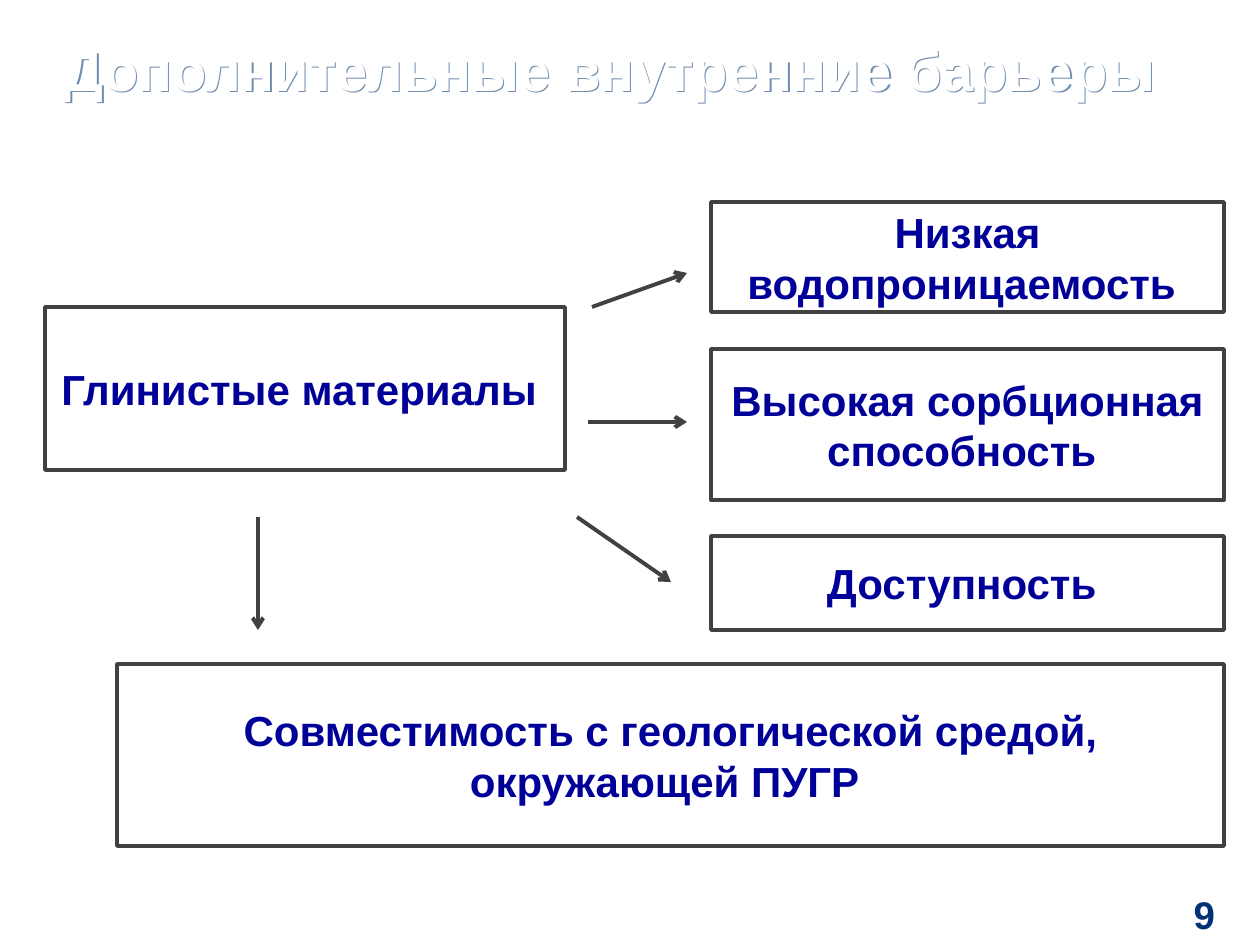
from lxml.etree import SubElement
from pptx import Presentation
from pptx.dml.color import RGBColor
from pptx.enum.shapes import MSO_CONNECTOR as Connector, MSO_SHAPE as Shape
from pptx.enum.text import MSO_ANCHOR as Anchor, PP_ALIGN as Align
from pptx.oxml.ns import qn
from pptx.util import Emu, Pt

SCALE = 914400 / 126
COLORS = {
    "white": "FFFFFF",
    "navy": "003274",
    "label": "000099",
    "line": "414142",
    "shadow": "6F8DB0",
}


def px(*values):
    return [Emu(round(value * SCALE)) for value in values]


def rgb(name):
    return RGBColor.from_string(COLORS[name])


def write(shape, text, size=24, color="label", align=Align.CENTER,
          margins=(13, 6, 13, 6), spacing=None):
    frame = shape.text_frame
    frame.word_wrap = True
    frame.vertical_anchor = Anchor.MIDDLE
    (frame.margin_left, frame.margin_top,
     frame.margin_right, frame.margin_bottom) = px(*margins)
    para = frame.paragraphs[0]
    para.alignment = align
    para.line_spacing = spacing
    span = para.add_run()
    span.text = text
    span.font.name = "Arial"
    span.font.size = Pt(size)
    span.font.bold = True
    span.font.color.rgb = rgb(color)


def add_title(page, box, text):
    title = page.shapes.add_textbox(*px(*box))
    write(title, text, size=32, color="white", align=Align.LEFT,
          margins=(0, 0, 0, 0), spacing=0.9)
    # A shadow on an unfilled box falls from its letters
    effects = SubElement(title._element.spPr, qn("a:effectLst"))
    shadow = SubElement(effects, qn("a:outerShdw"), dist="12700",
                        dir="2700000", algn="tl", rotWithShape="0")
    SubElement(shadow, qn("a:srgbClr"), val=COLORS["shadow"])


def add_page_number(page, box, text):
    number = page.shapes.add_textbox(*px(*box))
    write(number, text, size=22, color="navy", align=Align.RIGHT,
          margins=(0, 0, 45, 0))


def add_process(page, box, text):
    process = page.shapes.add_shape(Shape.FLOWCHART_PROCESS, *px(*box))
    process.shadow.inherit = False
    process.fill.solid()
    process.fill.fore_color.rgb = rgb("white")
    process.line.color.rgb = rgb("line")
    process.line.width = Pt(2)
    write(process, text)


def add_arrow(page, start, end):
    arrow = page.shapes.add_connector(Connector.STRAIGHT, *px(*start, *end))
    arrow.line.color.rgb = rgb("line")
    arrow.line.width = Pt(2.25)
    SubElement(arrow.line._get_or_add_ln(), qn("a:tailEnd"), type="arrow")
    SubElement(arrow._element.spPr, qn("a:effectLst"))


def add_diagram(page, box):
    left, top, width, height = box

    # Material and its compatibility with the surroundings
    add_process(page, (left + 72, top + 462, width - 72, height - 462),
                "Совместимость с геологической средой, окружающей ПУГР ")
    add_process(page, (left, top + 105, 520, 163), "Глинистые материалы ")

    # Properties stacked at the right edge
    properties = [
        (0, 110, "Низкая водопроницаемость "),
        (147, 151, "Высокая сорбционная способность "),
        (334, 94, "Доступность "),
    ]
    for offset, tall, text in properties:
        add_process(page, (left + width - 513, top + offset, 513, tall), text)

    # Arrows from the material to each property
    arrows = [
        ((547, 105), (642, 71)),
        ((543, 220), (642, 220)),
        ((532, 315), (626, 380)),
        ((213, 315), (213, 428)),
    ]
    for ends in arrows:
        add_arrow(page, *[(left + x, top + y) for x, y in ends])


def main():
    deck = Presentation()
    deck.slide_width, deck.slide_height = px(1260, 945)
    page = deck.slides.add_slide(deck.slide_layouts[6])
    add_title(page, (64, 11, 1132, 125), "Дополнительные внутренние барьеры")
    add_page_number(page, (1148, 888, 112, 52), "9")
    add_diagram(page, (45, 202, 1179, 644))
    deck.save("out.pptx")


if __name__ == "__main__":
    main()
